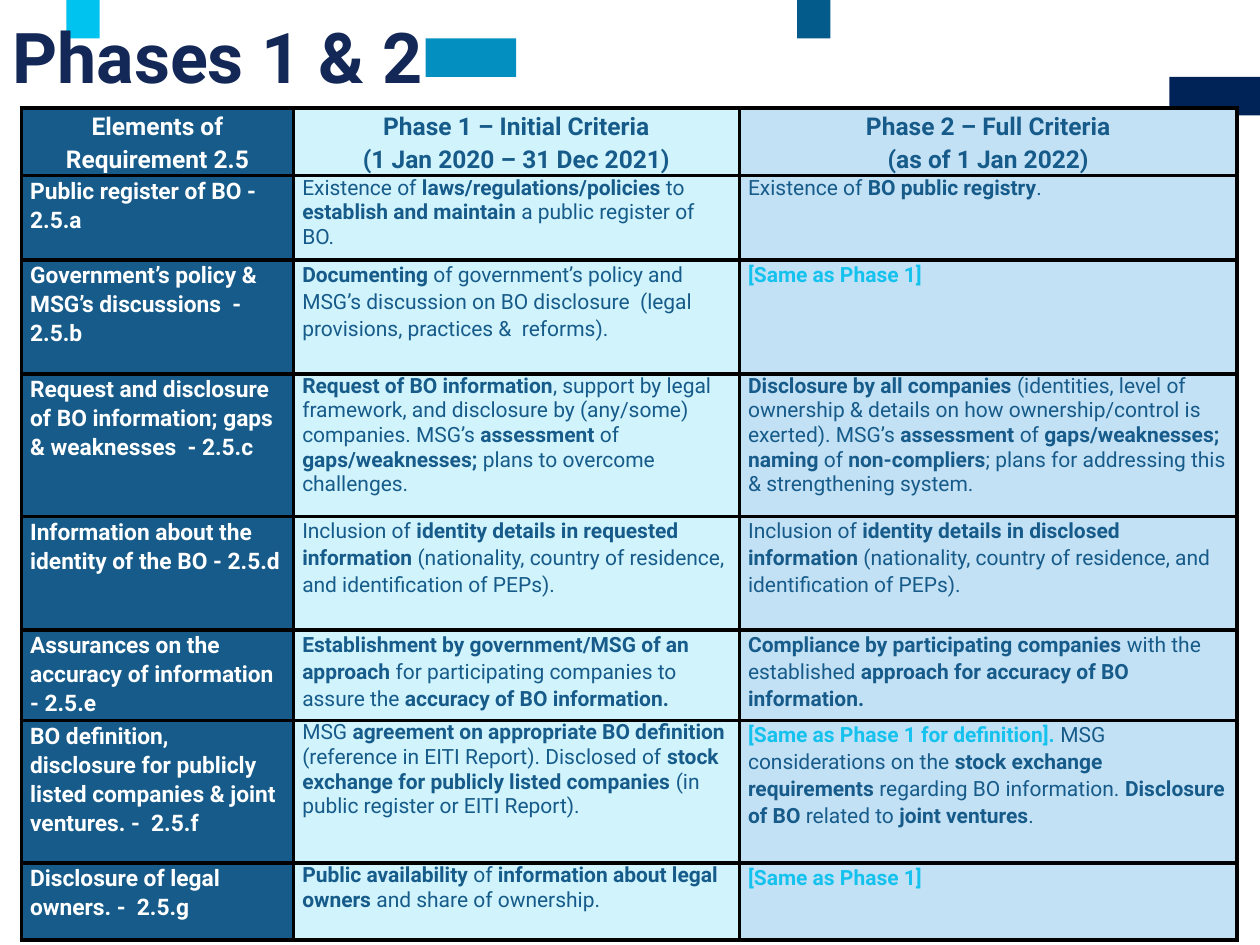
"""Build the slide comparing Phase 1 and Phase 2 beneficial ownership criteria."""
from lxml import etree
from pptx import Presentation
from pptx.dml.color import RGBColor
from pptx.enum import shapes, text
from pptx.oxml import ns
from pptx.util import Pt

FONT = "Roboto"
NAVY, BLUE, CYAN, WHITE, BLACK = "132856", "165B89", "15C2EE", "FFFFFF", "000100"
COLUMN_FILLS = (BLUE, "D0F3FC", "C3E1F5")
COLUMN_WIDTHS = (155.5, 254.75, 284.5)
TITLE = "Phases 1 & 2"
DECORATIONS = [
    (668.25, 44, 51.75, 22, "002357"),
    (455.5, 0, 19, 22, "025B8B"),
    (243.25, 22, 51.75, 22, "038FBF"),
    (38, 0, 19, 22, "00C3F0"),
]
HEADER_HEIGHT = 33
HEADERS = [
    ["Elements of Requirement 2.5"],
    ["Phase 1 – Initial Criteria", "(1 Jan 2020 – 31 Dec 2021)"],
    ["Phase 2 – Full Criteria", "(as of 1 Jan 2022)"],
]
# Each row: height, element, (Phase 1, line spacing), (Phase 2, line spacing); ** marks bold
ROWS = [
    (48.25, "Public register of BO - 2.5.a",
     ("Existence of **laws/regulations/policies** to **establish and maintain** "
      "a public register of BO.", 1),
     ("Existence of **BO public registry**.", 1)),
    (65, "Government’s policy &  MSG’s discussions  - 2.5.b",
     ("**Documenting** of government’s policy and MSG’s discussion on BO disclosure  "
      "(legal provisions, practices &  reforms).", 1.1),
     ("**[Same as Phase 1]**", 1.1)),
    (81.5, "Request and disclosure of BO information; gaps & weaknesses  - 2.5.c",
     ("**Request of BO information**, support by legal framework, and disclosure by "
      "(any/some) companies. MSG’s **assessment **of **gaps/weaknesses; **"
      "plans to overcome challenges.", 1),
     ("**Disclosure by all companies **(identities, level of ownership & details on how "
      "ownership/control is exerted). MSG’s **assessment **of **gaps/weaknesses; naming **"
      "of** non-compliers**; plans for addressing this & strengthening system.", 1)),
    (65, "Information about the identity of the BO - 2.5.d",
     ("Inclusion of **identity details in requested information** (nationality, country "
      "of residence, and identification of PEPs).", 1.1),
     ("Inclusion of **identity details in disclosed information** (nationality, country "
      "of residence, and identification of PEPs).", 1.1)),
    (48.25, "Assurances on the accuracy of information - 2.5.e",
     ("**Establishment by government/MSG of an approach **for participating companies "
      "to assure the **accuracy of BO information.**", 1.1),
     ("**Compliance by participating companies **with the established "
      "**approach for accuracy of BO information.**", 1.1)),
    (81.5, "BO definition,  disclosure for publicly listed companies & joint ventures. -  2.5.f",
     ("MSG **agreement on appropriate BO definition **(reference in EITI Report). Disclosed "
      "of **stock exchange for publicly listed companies **(in public register or "
      "EITI Report).", 1),
     ("**[Same as Phase 1 for definition].** MSG considerations on the **stock exchange "
      "requirements **regarding BO information. **Disclosure of BO **related to "
      "**joint ventures**.", 1.1)),
    (44, "Disclosure of legal owners. -  2.5.g",
     ("**Public availability **of **information about legal owners **"
      "and share of ownership.", 1),
     ("**[Same as Phase 1]**", 1.1)),
]


def rgb(value):
    return RGBColor.from_string(value)


def style(font, size, color=None, bold=None):
    font.name, font.size, font.bold = FONT, Pt(size), bold
    if color:
        font.color.rgb = rgb(color)


def format_cell(cell, fill):
    cell.margin_left = cell.margin_right = Pt(5)
    cell.margin_top = cell.margin_bottom = 0
    properties = cell._tc.get_or_add_tcPr()
    for side in ("a:lnL", "a:lnR", "a:lnT", "a:lnB"):
        line = etree.SubElement(properties, ns.qn(side), w=str(Pt(2.25)))
        paint = etree.SubElement(line, ns.qn("a:solidFill"))
        etree.SubElement(paint, ns.qn("a:srgbClr"), val=BLACK)
    cell.fill.solid()
    cell.fill.fore_color.rgb = rgb(fill)


def write_header(cell, lines, color):
    frame = cell.text_frame
    frame.text = "\n".join(lines)
    for para in frame.paragraphs:
        para.alignment = text.PP_ALIGN.CENTER
        para.line_spacing = 1.15
        style(para.font, 14, color, True)


def write_label(cell, label):
    para = cell.text_frame.paragraphs[0]
    para.text = label
    para.line_spacing = 1.1
    style(para.font, 13, WHITE, True)


def write_criteria(cell, marked, spacing):
    para = cell.text_frame.paragraphs[0]
    para.line_spacing = float(spacing)
    for index, part in enumerate(marked.split("**")):
        if part:
            span = para.add_run()
            span.text = part
            color = CYAN if part.startswith("[") else BLUE
            style(span.font, 12, color, index % 2 == 1)


def add_decorations(page):
    for left, top, width, height, color in DECORATIONS:
        block = page.shapes.add_shape(
            shapes.MSO_SHAPE.RECTANGLE, Pt(left), Pt(top), Pt(width), Pt(height))
        block.shadow.inherit = False
        block.fill.solid()
        block.fill.fore_color.rgb = rgb(color)
        block.line.fill.background()


def add_title(page):
    box = page.shapes.add_textbox(0, Pt(8.75), Pt(644.5), Pt(52.5))
    frame = box.text_frame
    frame.word_wrap = True
    frame.vertical_anchor = text.MSO_ANCHOR.MIDDLE
    para = frame.paragraphs[0]
    para.text = TITLE
    para.line_spacing = 0.89
    style(para.font, 40, NAVY, True)


def add_criteria_table(page):
    heights = [HEADER_HEIGHT] + [row[0] for row in ROWS]
    table = page.shapes.add_table(
        len(heights), len(COLUMN_WIDTHS), Pt(12.25), Pt(61.75),
        Pt(sum(COLUMN_WIDTHS)), Pt(sum(heights))).table
    table.first_row = table.horz_banding = False
    for column, width in zip(table.columns, COLUMN_WIDTHS):
        column.width = Pt(width)
    for row, height in zip(table.rows, heights):
        row.height = Pt(height)
        for cell, fill in zip(row.cells, COLUMN_FILLS):
            format_cell(cell, fill)
    for column, lines in enumerate(HEADERS):
        write_header(table.cell(0, column), lines, BLUE if column else WHITE)
    for number, (_, label, *phases) in enumerate(ROWS, 1):
        write_label(table.cell(number, 0), label)
        for column, (marked, spacing) in enumerate(phases, 1):
            write_criteria(table.cell(number, column), marked, spacing)


def main():
    deck = Presentation()
    deck.slide_width, deck.slide_height = Pt(720), Pt(540)
    page = deck.slides.add_slide(deck.slide_layouts[6])
    add_decorations(page)
    add_title(page)
    add_criteria_table(page)
    deck.save("out.pptx")


if __name__ == "__main__":
    main()
